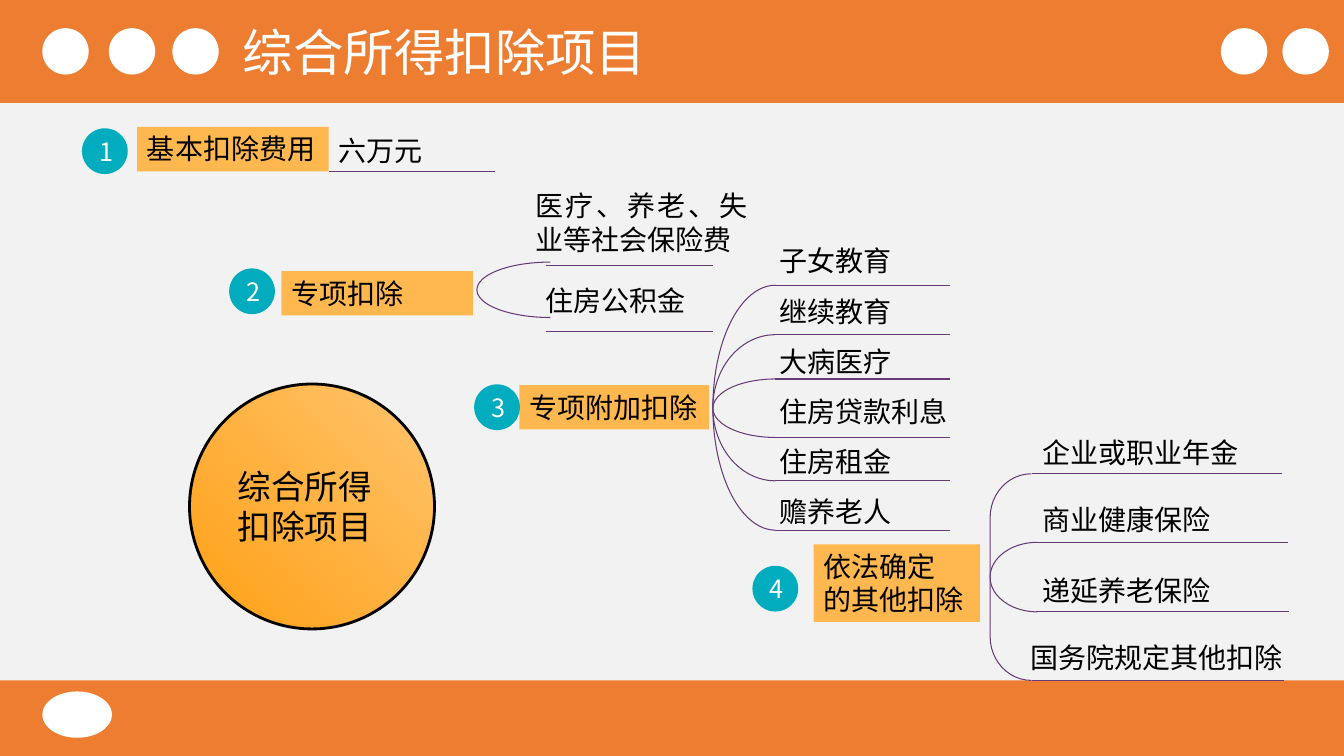
from lxml import etree
from pptx import Presentation
from pptx.dml.color import RGBColor
from pptx.enum.shapes import MSO_CONNECTOR, MSO_SHAPE
from pptx.enum.text import MSO_ANCHOR, MSO_AUTO_SIZE, PP_ALIGN
from pptx.oxml.ns import qn
from pptx.util import Inches, Pt

RECT, OVAL, BRACKET = MSO_SHAPE.RECTANGLE, MSO_SHAPE.OVAL, MSO_SHAPE.LEFT_BRACKET
STRAIGHT = MSO_CONNECTOR.STRAIGHT
TOP, MIDDLE = MSO_ANCHOR.TOP, MSO_ANCHOR.MIDDLE
LEFT, CENTER, JUSTIFY = PP_ALIGN.LEFT, PP_ALIGN.CENTER, PP_ALIGN.JUSTIFY
GROW = MSO_AUTO_SIZE.SHAPE_TO_FIT_TEXT
NO_GROW = MSO_AUTO_SIZE.NONE

FONT = "Noto Sans CJK SC"
GREY = RGBColor(0xF2, 0xF2, 0xF2)
ORANGE = RGBColor(0xED, 0x7D, 0x31)
AMBER = RGBColor(0xFF, 0xB8, 0x50)
DEEP_AMBER = RGBColor(0xFF, 0xA0, 0x15)
LIGHT_AMBER = RGBColor(0xFF, 0xC4, 0x6D)
TEAL = RGBColor(0x01, 0xAC, 0xBE)
PURPLE = RGBColor(0x66, 0x3A, 0x77)
WHITE = RGBColor(0xFF, 0xFF, 0xFF)
BLACK = RGBColor(0, 0, 0)

DOT = 0.46
BADGE = 0.44
ROW = 0.43

TOPICS = [
    ("1", "基本扣除费用", (0.82, 1.28), (1.36, 1.26, 1.9, 0.44)),
    ("2", "专项扣除", (2.28, 2.67), (2.79, 2.69, 1.9, 0.44)),
    ("3", "专项附加扣除", (4.71, 3.82), (5.15, 3.82, 1.88, 0.44)),
    ("4", "依法确定\n的其他扣除", (7.47, 5.62), (8.07, 5.4, 1.65, 0.77)),
]
INSURANCE = [
    ("医疗、养老、失业等社会保险费", 5.21, 1.82, 2.3, 0.77, 2.63),
    ("住房公积金", 5.31, 2.76, 1.9, ROW, 3.29),
]
ADDITIONAL = [
    ("子女教育", 2.83), ("继续教育", 3.32), ("大病医疗", 3.76),
    ("住房贷款利息", 4.34), ("住房租金", 4.77), ("赡养老人", 5.26),
]
OTHERS = [
    ("企业或职业年金", 10.24, 4.27, 2.47, 10.24, 4.7, 2.48),
    ("商业健康保险", 10.24, 4.94, 2.47, 10.27, 5.38, 2.5),
    ("递延养老保险", 10.24, 5.64, 2.48, 10.28, 6.07, 2.5),
    ("国务院规定其他扣除", 10.12, 6.31, 2.8, 10.24, 6.75, 2.5),
]


def place(sp, x, y, w, h):
    sp.left, sp.top, sp.width, sp.height = (Inches(v) for v in (x, y, w, h))


def write(sp, text, size, color, align=JUSTIFY, anchor=TOP, autosize=GROW):
    tf = sp.text_frame
    tf.text = text
    tf.word_wrap = True
    tf.auto_size = autosize
    tf.vertical_anchor = anchor
    for p in tf.paragraphs:
        p.alignment = align
        for r in p.runs:
            r.font.size = Pt(size)
            r.font.name = FONT
            r.font.color.rgb = color
            ea = etree.SubElement(r.font._element, qn("a:ea"))
            ea.set("typeface", FONT)


def add_plain(s, kind, x, y, w, h, fill=None, line=None, width=0.75):
    sp = s.shapes.add_shape(kind, Inches(x), Inches(y), Inches(w), Inches(h))
    sp.shadow.inherit = False
    if fill is None:
        sp.fill.background()
    else:
        sp.fill.solid()
        sp.fill.fore_color.rgb = fill
    if line is None:
        sp.line.fill.background()
    else:
        sp.line.color.rgb = line
        sp.line.width = Pt(width)
    return sp


def add_label(s, text, x, y, w, h=ROW, size=20):
    sp = s.shapes.add_textbox(Inches(x), Inches(y), Inches(w), Inches(h))
    write(sp, text, size, BLACK)


def add_rule(s, x, y, length):
    line = s.shapes.add_connector(
        STRAIGHT, Inches(x), Inches(y), Inches(x + length), Inches(y))
    line.line.color.rgb = PURPLE
    line.line.width = Pt(0.75)
    etree.SubElement(line.element.spPr, qn("a:effectLst"))


def add_bracket(s, x, y, w, h, curve=None):
    sp = add_plain(s, BRACKET, x, y, w, h, line=PURPLE)
    sp.adjustments[0] = curve or h / (2 * min(w, h))


def add_topic(s, number, text, badge_at, box):
    write(add_plain(s, RECT, *box, fill=AMBER), text, 20, BLACK)
    badge = add_plain(s, OVAL, *badge_at, BADGE, BADGE, TEAL, TEAL, 1)
    write(badge, number, 18, WHITE, CENTER, MIDDLE, NO_GROW)


def add_frame(s):
    header = add_plain(s, RECT, 0, 0, 13.33, 1.02, ORANGE)
    add_plain(s, RECT, 0, 6.75, 13.33, 0.75, ORANGE)
    for x in (0.42, 1.08, 1.71, 12.11, 12.72):
        add_plain(s, OVAL, x, 0.28, DOT, DOT, WHITE)
    add_plain(s, OVAL, 0.42, 6.86, 0.69, DOT, WHITE)
    title = s.shapes.title
    place(title, 2.31, 0.16, 4.35, 0.71)
    write(title, "综合所得扣除项目", 36, WHITE, LEFT)
    header.element.addnext(title.element)


def add_hub(s):
    hub = add_plain(s, OVAL, 1.88, 3.81, 2.43, 2.43, line=BLACK, width=2)
    hub.fill.gradient()
    hub.fill.gradient_angle = 45
    for stop, position, color in zip(
            hub.fill.gradient_stops, (0, 1), (DEEP_AMBER, LIGHT_AMBER)):
        stop.position = position
        stop.color.rgb = color
    add_label(s, "综合所得\n扣除项目", 2.26, 4.57, 1.65, 0.91, 24)


def add_branches(s):
    add_label(s, "六万元", 3.26, 1.28, 1.65)
    add_rule(s, 3.26, 1.7, 1.65)

    add_bracket(s, 4.73, 2.6, 0.73, 0.55)
    for text, x, y, w, h, rule_y in INSURANCE:
        add_label(s, text, x, y, w, h)
        add_rule(s, 5.42, rule_y, 1.65)

    for i, (text, rule_y) in enumerate(ADDITIONAL):
        add_label(s, text, 7.63, 2.37 + 0.498 * i, 1.9)
        add_rule(s, 7.69, rule_y, 1.73)
    for i in range(len(ADDITIONAL) // 2):
        top, bottom = ADDITIONAL[i][1], ADDITIONAL[-1 - i][1]
        add_bracket(s, 7.07, top, 0.62, bottom - top)

    add_bracket(s, 9.82, 4.7, 0.41, 2.05, 1.06)
    add_bracket(s, 9.82, 5.38, 0.47, 0.69)
    for text, x, y, w, rule_x, rule_y, length in OTHERS:
        add_label(s, text, x, y, w)
        add_rule(s, rule_x, rule_y, length)


def main():
    prs = Presentation()
    prs.slide_width, prs.slide_height = Inches(13.33), Inches(7.5)
    s = prs.slides.add_slide(prs.slide_layouts[5])
    s.background.fill.solid()
    s.background.fill.fore_color.rgb = GREY
    add_frame(s)
    for topic in TOPICS:
        add_topic(s, *topic)
    add_branches(s)
    add_hub(s)
    prs.save("out.pptx")


if __name__ == "__main__":
    main()
